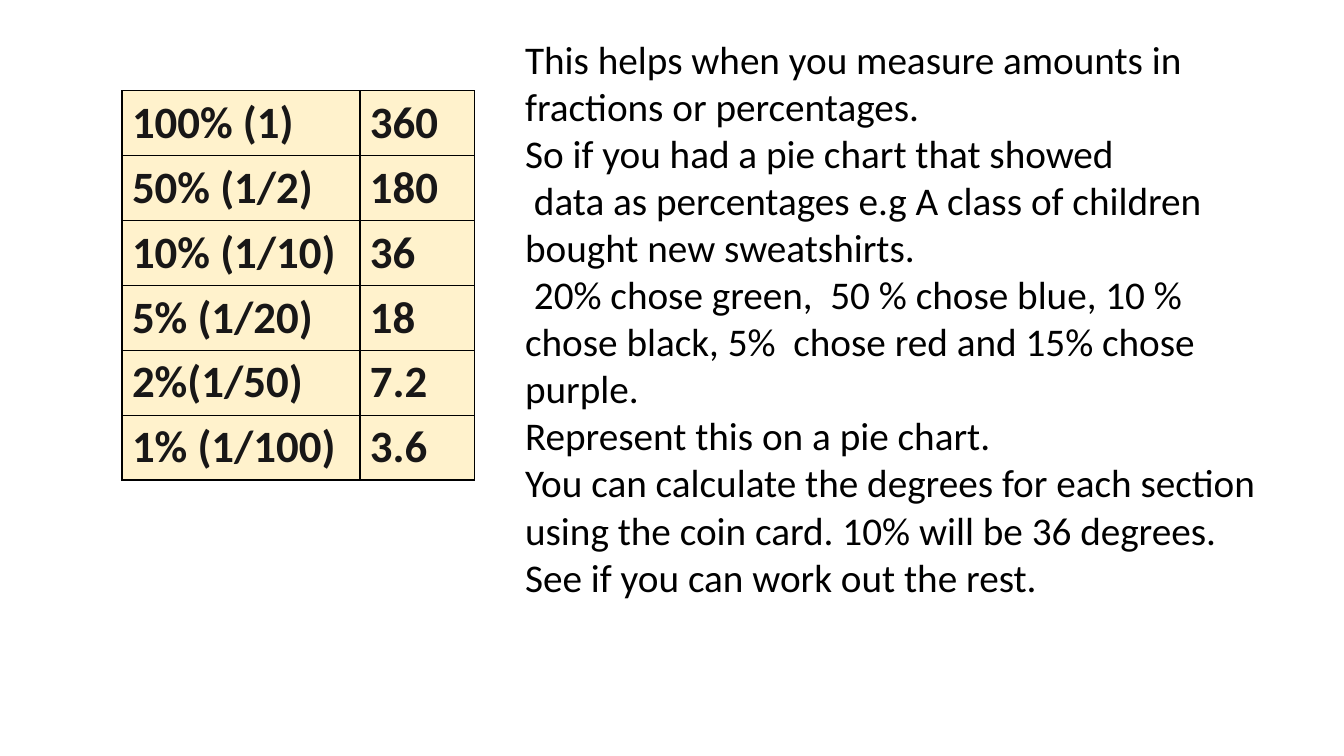
import pptx
import pptx.util
import pptx.dml.color
import pptx.enum.text
import pptx.oxml
import pptx.oxml.ns

HUES = {"ink": "000000", "cell": "181717", "fill": "FFF2CC", "line": "000000"}
ROWS = [
    ("100% (1)", "360"),
    ("50% (1/2)", "180"),
    ("10% (1/10)", "36"),
    ("5% (1/20)", "18"),
    ("2%(1/50)", "7.2"),
    ("1% (1/100)", "3.6"),
]
LINES = [
    "This helps when you measure amounts in fractions or percentages.",
    "So if you had a pie chart that showed",
    " data as percentages e.g A class of children bought new sweatshirts.",
    " 20% chose green,  50 % chose blue, 10 % chose black, 5%  chose red and 15% chose purple.",
    "Represent this on a pie chart.",
    "You can calculate the degrees for each section using the coin card. "
    "10% will be 36 degrees. See if you can work out the rest.",
]


def inch(*nums):
    return [pptx.util.Inches(num) for num in nums]


def tint(name):
    return pptx.dml.color.RGBColor.from_string(HUES[name])


def write(para, text, font="Calibri", size=28, hue="ink", bold=False):
    run = para.add_run()
    run.text = text
    run.font.name = font
    run.font.size = pptx.util.Pt(size)
    run.font.bold = bold
    run.font.color.rgb = tint(hue)


class Page:
    def __init__(self, deck, font="Calibri"):
        self.slide = deck.slides.add_slide(deck.slide_layouts[6])
        self.font = font

    def edge(self, cell):
        props = cell._tc.get_or_add_tcPr()
        space = pptx.oxml.ns.nsdecls("a")
        for spot, side in enumerate(("lnL", "lnR", "lnT", "lnB")):
            props.insert(spot, pptx.oxml.parse_xml(
                f'<a:{side} {space} w="{pptx.util.Pt(1)}"><a:solidFill>'
                f'<a:srgbClr val="{HUES["line"]}"/></a:solidFill></a:{side}>'))

    def grid(self, rows, left, top, cols, high):
        box = inch(left, top, sum(cols), high * len(rows))
        table = self.slide.shapes.add_table(len(rows), len(cols), *box).table
        for col, wide in zip(table.columns, inch(*cols)):
            col.width = wide
        for y, row in enumerate(rows):
            for x, text in enumerate(row):
                cell = table.cell(y, x)
                cell.fill.solid()
                cell.fill.fore_color.rgb = tint("fill")
                self.edge(cell)
                write(cell.text_frame.paragraphs[0], text, font=self.font,
                      size=32, hue="cell", bold=True)

    def text(self, lines, *box):
        frame = self.slide.shapes.add_textbox(*inch(*box)).text_frame
        frame.word_wrap = True
        frame.auto_size = pptx.enum.text.MSO_AUTO_SIZE.SHAPE_TO_FIT_TEXT
        for spot, line in enumerate(lines):
            para = frame.add_paragraph() if spot else frame.paragraphs[0]
            write(para, line, font=self.font)


def main():
    deck = pptx.Presentation()
    deck.slide_width, deck.slide_height = inch(13.33, 7.5)
    page = Page(deck)
    page.grid(ROWS, 1.21, 0.9, (2.36, 1.14), 0.57)
    page.text(LINES, 5.11, 0.3, 7.66, 6.06)
    deck.save("out.pptx")


if __name__ == "__main__":
    main()
